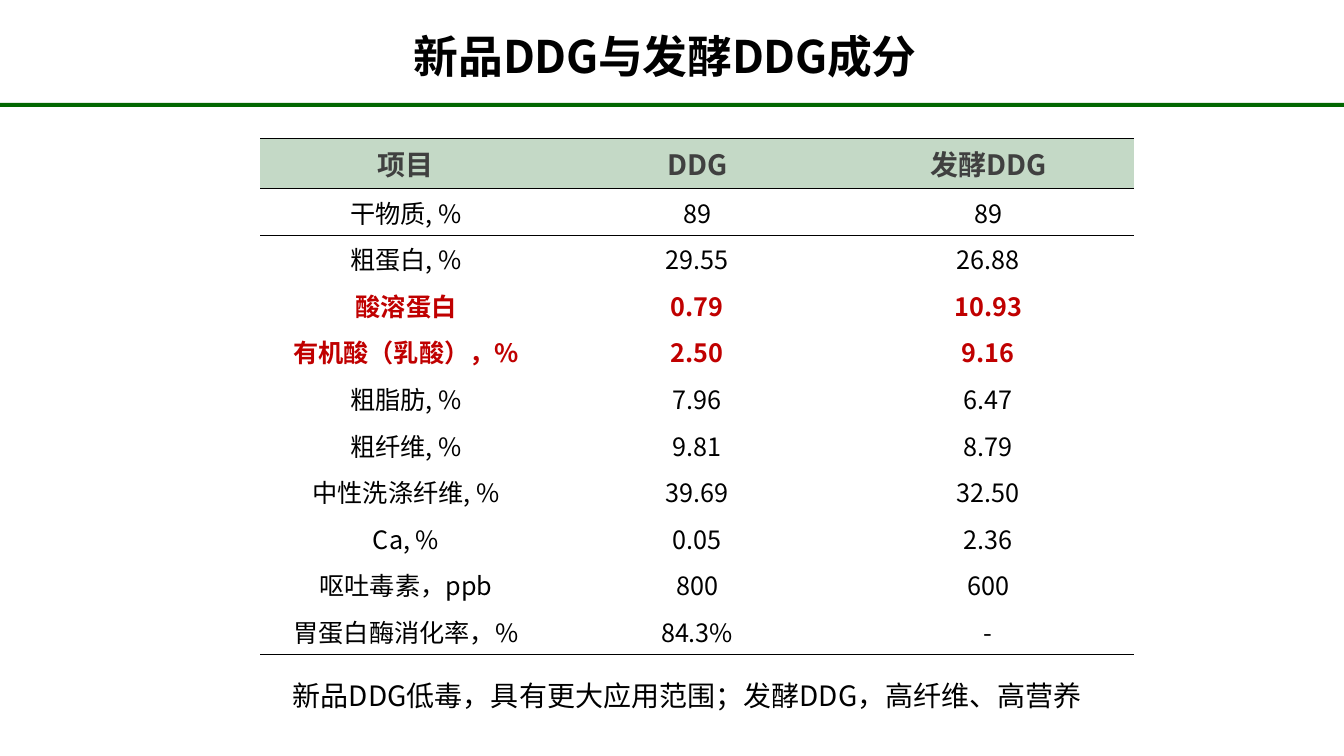
"""Build the slide comparing the composition of DDG and fermented DDG."""
from typing import NamedTuple

from lxml import etree
from pptx import Presentation
from pptx import util as u
from pptx.dml.color import RGBColor
from pptx.enum import lang, shapes, text
from pptx.oxml import ns

FONT = "Noto Sans CJK SC"
BLACK, GREY, RED, GREEN, MINT = "000000", "404040", "C00000", "026701", "C4D9C6"
PLAIN_TABLE = "{2D5ABB26-0587-4C30-8999-92F81FD0307C}"
WIDTH, HEIGHT = u.Inches(40 / 3), u.Inches(7.5)
COLUMNS, ROWS = 160, 90
HEADER_ROWS, BODY_ROWS = 6, 5.55


class Area(NamedTuple):
    """A rectangle in grid columns and rows."""
    column: float
    row: float
    columns: float
    rows: float


class Style(NamedTuple):
    """The look of a line of text."""
    size: int
    color: str = BLACK
    bold: bool = False


class Component(NamedTuple):
    """One row of the composition table."""
    item: str
    ddg: str
    fermented: str
    style: Style = Style(18)


HEADING = Style(20, GREY, True)
KEY = Style(18, RED, True)
COMPONENTS = [
    Component("项目", "DDG", "发酵DDG", HEADING),
    Component("干物质, %", "89", "89"),
    Component("粗蛋白, %", "29.55", "26.88"),
    Component("酸溶蛋白", "0.79", "10.93", KEY),
    Component("有机酸（乳酸），%", "2.50", "9.16", KEY),
    Component("粗脂肪, %", "7.96", "6.47"),
    Component("粗纤维, %", "9.81", "8.79"),
    Component("中性洗涤纤维, %", "39.69", "32.50"),
    Component("Ca, %", "0.05", "2.36"),
    Component("呕吐毒素，ppb", "800", "600"),
    Component("胃蛋白酶消化率，%", "84.3%", "-"),
]


def rgb(color: str) -> RGBColor:
    """Turn a hex string into a colour."""
    return RGBColor.from_string(color)


def across(columns: float) -> int:
    """Turn grid columns into a length."""
    return round(WIDTH * columns / COLUMNS)


def down(rows: float) -> int:
    """Turn grid rows into a length."""
    return round(HEIGHT * rows / ROWS)


def place(area: Area) -> tuple[int, int, int, int]:
    """Return left, top, width and height of an area."""
    return across(area.column), down(area.row), across(area.columns), down(area.rows)


def write(frame, words: str, style: Style) -> None:
    """Set one centred line of styled text."""
    frame.text = words
    line = frame.paragraphs[0]
    line.alignment = text.PP_ALIGN.CENTER
    line.line_spacing = 1.0
    for run in line.runs:
        font = run.font
        font.name, font.size, font.bold = FONT, u.Pt(style.size), style.bold
        font.color.rgb = rgb(style.color)
        font.language_id = lang.MSO_LANGUAGE_ID.SIMPLIFIED_CHINESE
        latin = run._r.rPr.find(ns.qn("a:latin"))
        latin.addnext(etree.Element(ns.qn("a:ea"), typeface=FONT))


def write_box(box, area: Area, words: str, style: Style) -> None:
    """Place a text shape without margins and fill it."""
    box.left, box.top, box.width, box.height = place(area)
    frame = box.text_frame
    frame.word_wrap = True
    frame.auto_size = text.MSO_AUTO_SIZE.NONE
    frame.vertical_anchor = text.MSO_ANCHOR.MIDDLE
    frame.margin_left = frame.margin_right = frame.margin_top = frame.margin_bottom = 0
    write(frame, words, style)


def draw_borders(cell, sides: str) -> None:
    """Draw black one-point borders on the named sides."""
    for position, side in enumerate(sides):
        border = etree.Element(ns.qn(f"a:ln{side}"), w=str(u.Pt(1)))
        fill = etree.SubElement(border, ns.qn("a:solidFill"))
        etree.SubElement(fill, ns.qn("a:srgbClr"), val=BLACK)
        cell._tc.get_or_add_tcPr().insert(position, border)


def draw_composition(slide, area: Area) -> None:
    """Draw the three-line composition table."""
    last = len(COMPONENTS) - 1
    table = slide.shapes.add_table(len(COMPONENTS), 3, *place(area)).table
    table._tbl.tblPr.find(ns.qn("a:tableStyleId")).text = PLAIN_TABLE
    table.first_row = table.horz_banding = False
    borders = {0: "TB", 1: "T", last: "B"}
    for index, component in enumerate(COMPONENTS):
        table.rows[index].height = down(BODY_ROWS if index else HEADER_ROWS)
        for cell, words in zip(table.rows[index].cells, component[:3]):
            if index:
                cell.fill.background()
            else:
                cell.fill.solid()
                cell.fill.fore_color.rgb = rgb(MINT)
            cell.vertical_anchor = text.MSO_ANCHOR.MIDDLE
            write(cell.text_frame, words, component.style)
            draw_borders(cell, borders.get(index, ""))


def draw_rule(slide, area: Area) -> None:
    """Draw the green band under the title."""
    rule = slide.shapes.add_shape(shapes.MSO_SHAPE.RECTANGLE, *place(area))
    rule.shadow.inherit = False
    rule.fill.solid()
    rule.fill.fore_color.rgb = rgb(GREEN)
    rule.line.fill.background()


def main() -> None:
    """Build and save the slide."""
    deck = Presentation()
    deck.slide_width, deck.slide_height = WIDTH, HEIGHT
    slide = deck.slides.add_slide(deck.slide_layouts[5])
    title = slide.shapes.title
    write_box(title, Area(3.6, 3, 151.2, 7.2), "新品DDG与发酵DDG成分", Style(32, BLACK, True))
    title.text_frame.paragraphs[0].runs[0]._r.rPr.set("spc", "-30")
    draw_rule(slide, Area(0, 12.24, COLUMNS, 0.48))
    body = HEADER_ROWS + BODY_ROWS * (len(COMPONENTS) - 1)
    draw_composition(slide, Area(31, 16.44, 104, body))
    area = Area(16.2, 79.56, 131.28, 6.48)
    summary = slide.shapes.add_textbox(*place(area))
    write_box(summary, area, "新品DDG低毒，具有更大应用范围；发酵DDG，高纤维、高营养", Style(20))
    deck.save("out.pptx")


if __name__ == "__main__":
    main()
